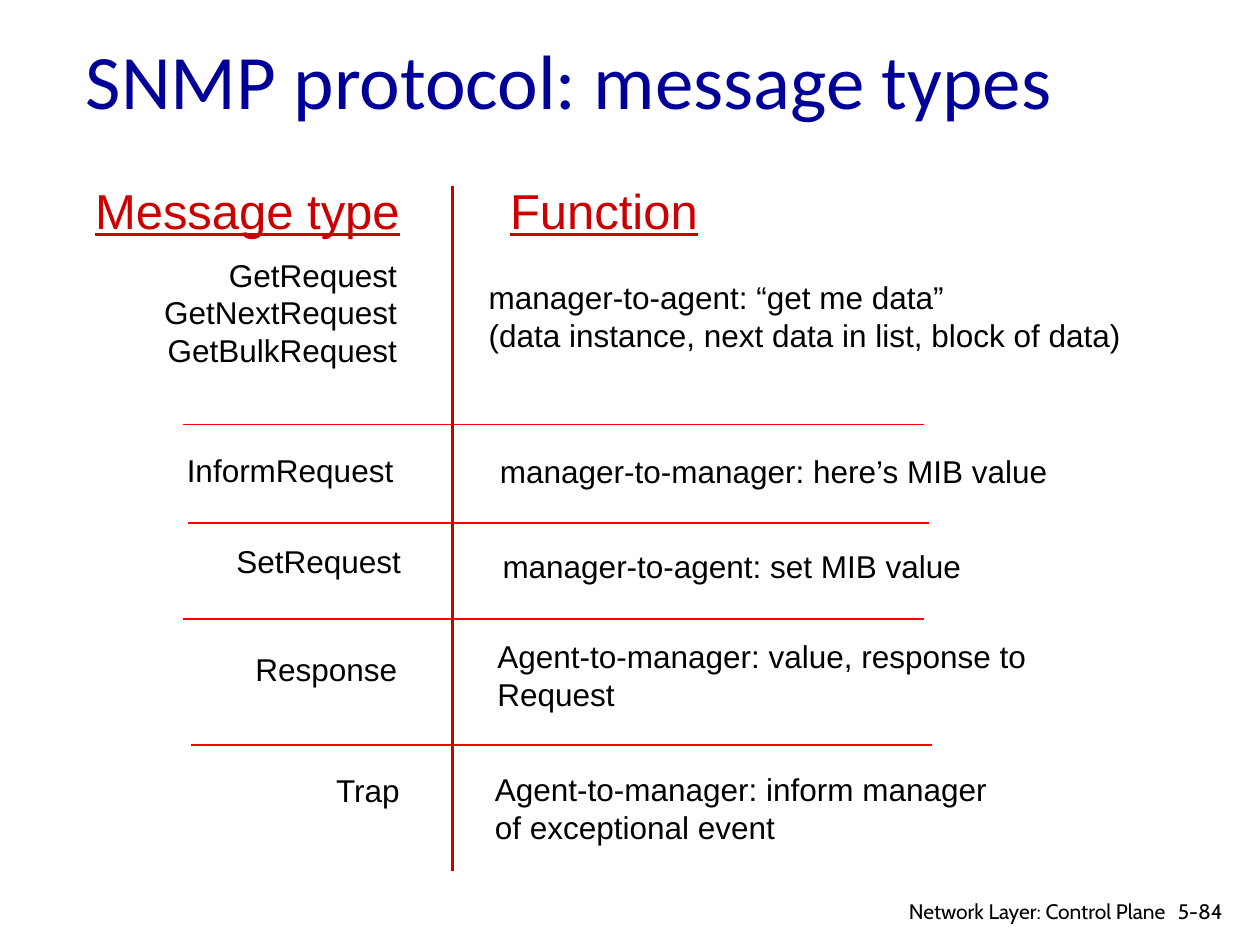
import pptx
import pptx.util
from dataclasses import dataclass
from lxml import etree
from pptx.dml.color import RGBColor
from pptx.enum.shapes import MSO_CONNECTOR
from pptx.enum.text import MSO_ANCHOR, PP_ALIGN
from pptx.oxml.ns import qn

# The slide is a grid of 100 columns by 75 rows
COLS, ROWS = 100, 75
COLORS = {"title": "000099", "heading": "CC0000", "rule": "FF0000", "text": "000000"}
LEFT, RIGHT = PP_ALIGN.LEFT, PP_ALIGN.RIGHT

prs = pptx.Presentation()
prs.slide_width = pptx.util.Inches(10)
prs.slide_height = pptx.util.Inches(7.5)


@dataclass
class Label:
    lines: list[str]
    col: float
    row: float
    width: float
    height: float
    align: PP_ALIGN = LEFT
    size: float = 18
    font: str = "Arial"
    color: str = "text"
    underline: bool = False


@dataclass
class Rule:
    start: tuple[float, float]
    end: tuple[float, float]
    color: str = "rule"
    weight: float = 1


def x(col: float) -> int:
    return round(prs.slide_width * col / COLS)


def y(row: float) -> int:
    return round(prs.slide_height * row / ROWS)


def write(tf, label: Label) -> None:
    tf.word_wrap = True
    for i, line in enumerate(label.lines):
        p = tf.add_paragraph() if i else tf.paragraphs[0]
        p.alignment = label.align
        r = p.add_run()
        r.text = line
        r.font.name = label.font
        r.font.size = pptx.util.Pt(label.size)
        r.font.color.rgb = RGBColor.from_string(COLORS[label.color])
        if label.underline:
            r.font.underline = True


def add_label(s, label: Label) -> None:
    sp = s.shapes.add_textbox(x(label.col), y(label.row), x(label.width), y(label.height))
    write(sp.text_frame, label)


def add_rule(s, rule: Rule) -> None:
    (c1, r1), (c2, r2) = rule.start, rule.end
    line = s.shapes.add_connector(MSO_CONNECTOR.STRAIGHT, x(c1), y(r1), x(c2), y(r2))
    line.line.color.rgb = RGBColor.from_string(COLORS[rule.color])
    line.line.width = pptx.util.Pt(rule.weight)
    etree.SubElement(line._element.spPr, qn("a:effectLst"))


def add_title(s, label: Label) -> None:
    sp = s.shapes.title
    sp.left, sp.top = x(label.col), y(label.row)
    sp.width, sp.height = x(label.width), y(label.height)
    sp.text_frame.vertical_anchor = MSO_ANCHOR.MIDDLE
    write(sp.text_frame, label)


s = prs.slides.add_slide(prs.slide_layouts[5])
add_title(s, Label(["SNMP protocol: message types"], 5.8, 0, 85, 12.5,
                   size=44, font="Calibri", color="title"))

# Column headings
for text, col, width, align in [("Message type", 6.2, 26.5, RIGHT),
                                ("Function", 39.5, 17.1, LEFT)]:
    add_label(s, Label([text], col, 13.8, width, 5.7, align, 28,
                       color="heading", underline=True))

# Message types, right-aligned against the divider
add_label(s, Label(["GetRequest", "GetNextRequest", "GetBulkRequest"],
                   5.5, 19.8, 27, 13.1, RIGHT))
for text, col, row in [("InformRequest", 4, 35.3), ("SetRequest", 4.6, 42.5),
                       ("Response", 4.3, 51.1), ("Trap", 4.5, 60.7)]:
    add_label(s, Label([text], col, row, 28.2, 5, RIGHT))

# Functions
for lines, col, row, width in [
    (["manager-to-agent: “get me data”",
      "(data instance, next data in list, block of data)"], 37.8, 21.6, 52.7),
    (["manager-to-manager: here’s MIB value"], 38.7, 35.4, 49.3),
    (["manager-to-agent: set MIB value"], 38.9, 42.9, 46.7),
    (["Agent-to-manager: value, response to", "Request"], 38.5, 50.1, 46.3),
    (["Agent-to-manager: inform manager", "of exceptional event"], 38.3, 60.6, 52.4),
]:
    add_label(s, Label(lines, col, row, width, 0.9 + 3.1 * len(lines)))

# Row rules and column divider
for col, row in [(14.5, 33.7), (14.9, 41.5), (14.5, 49.1), (15.2, 59.1)]:
    add_rule(s, Rule((col, row), (col + 58.8, row)))
add_rule(s, Rule((35.9, 14.8), (35.9, 69.1), "heading", 2))

# Footer
add_label(s, Label(["5-84"], 92.5, 70.8, 6, 3, size=12, font="Cabin"))
add_label(s, Label(["Network Layer: Control Plane"], 69.7, 70.8, 23.8, 2.6,
                   RIGHT, 12, "Cabin"))

prs.save("out.pptx")
